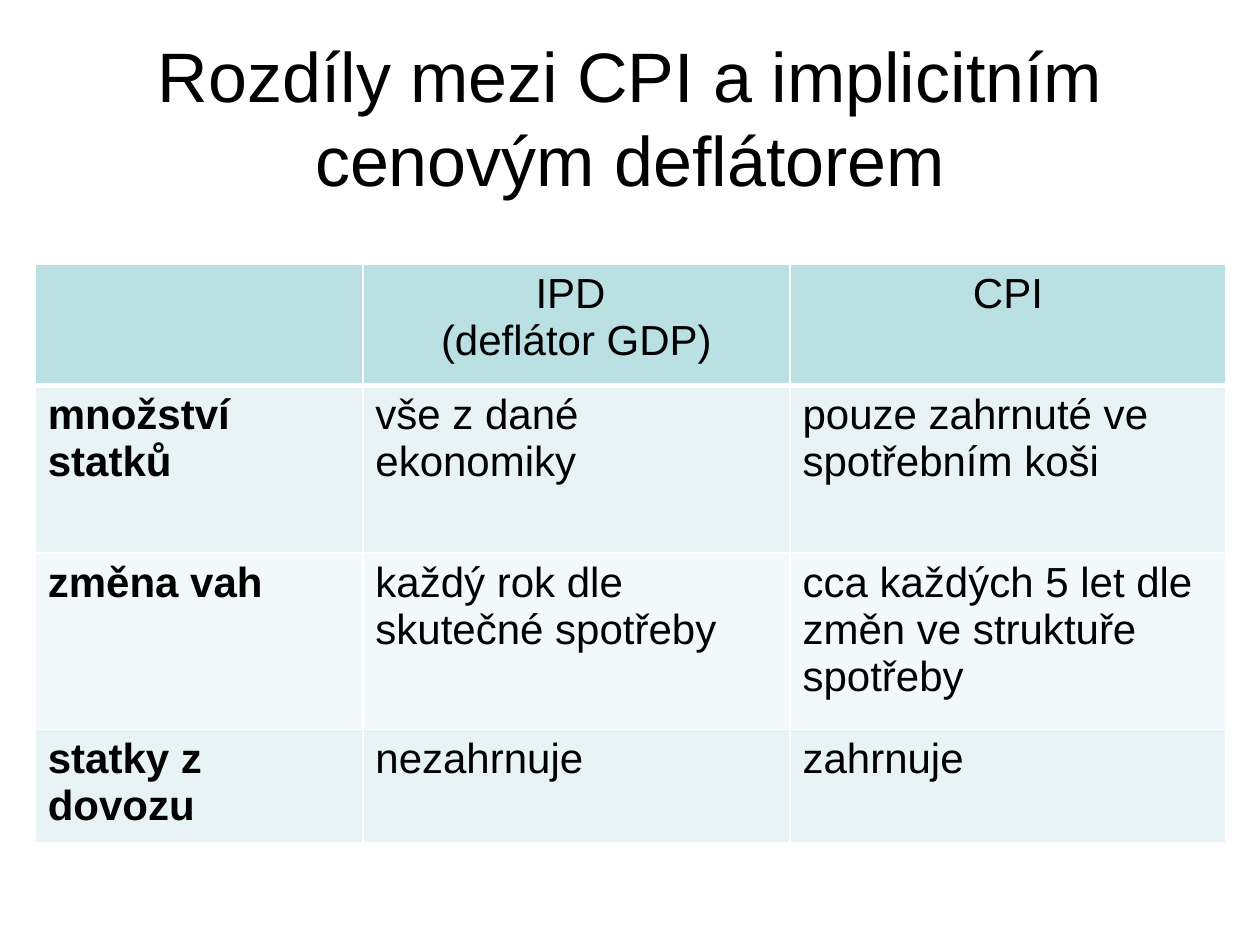
from lxml.etree import SubElement
from pptx import Presentation
from pptx.dml.color import RGBColor
from pptx.enum.text import MSO_ANCHOR, PP_ALIGN
from pptx.oxml.ns import qn
from pptx.util import Inches, Pt

TITLE = "Rozdíly mezi CPI a implicitním cenovým deflátorem"
ROWS = [
    ["", "IPD \n(deflátor GDP)", "CPI"],
    ["množství statků", "vše z dané ekonomiky", "pouze zahrnuté ve spotřebním koši"],
    ["změna vah", "každý rok dle skutečné spotřeby",
     "cca každých 5 let dle změn ve struktuře spotřeby"],
    ["statky z dovozu", "nezahrnuje", "zahrnuje"],
]
COL_WIDTHS = [2.6, 3.39, 3.46]
ROW_HEIGHTS = [0.96, 1.33, 1.4, 0.56]
HEADER_FILL, BAND_FILLS = "BBE0E3", ["F3F9FA", "E7F3F4"]
TEXT, BORDER = "000000", "FFFFFF"


def rgb(value):
    return RGBColor.from_string(value)


def write(tf, text, size, align, bold=False):
    for i, line in enumerate(text.split("\n")):
        p = tf.paragraphs[0] if i == 0 else tf.add_paragraph()
        p.alignment = align
        if line:
            r = p.add_run()
            r.text = line
            r.font.name, r.font.size, r.font.bold = "Arial", Pt(size), bold
            r.font.color.rgb = rgb(TEXT)


def add_borders(cell, bottom):
    """Border lines must come before the fill in the cell properties."""
    tc_pr = cell._tc.get_or_add_tcPr()
    for side, width in (("L", 1), ("R", 1), ("T", 1), ("B", bottom)):
        ln = SubElement(tc_pr, qn(f"a:ln{side}"), w=str(Pt(width)))
        fill = SubElement(ln, qn("a:solidFill"))
        SubElement(fill, qn("a:srgbClr"), val=BORDER)


prs = Presentation()
prs.slide_width, prs.slide_height = Inches(10), Inches(7.5)
s = prs.slides.add_slide(prs.slide_layouts[6])

title = s.shapes.add_textbox(Inches(0.5), Inches(0.3), Inches(9), Inches(1.25))
tf = title.text_frame
tf.word_wrap = True
tf.vertical_anchor = MSO_ANCHOR.MIDDLE
write(tf, TITLE, 40, PP_ALIGN.CENTER)

table = s.shapes.add_table(
    len(ROWS), len(COL_WIDTHS), Inches(0.28), Inches(2.1),
    Inches(sum(COL_WIDTHS)), Inches(sum(ROW_HEIGHTS))).table
for column, width in zip(table.columns, COL_WIDTHS):
    column.width = Inches(width)
for row, height in zip(table.rows, ROW_HEIGHTS):
    row.height = Inches(height)

for i, texts in enumerate(ROWS):
    header = i == 0
    for j, text in enumerate(texts):
        cell = table.cell(i, j)
        add_borders(cell, bottom=3 if header else 1)
        cell.fill.solid()
        cell.fill.fore_color.rgb = rgb(HEADER_FILL if header else BAND_FILLS[i % 2])
        write(cell.text_frame, text, 24,
              PP_ALIGN.CENTER if header else PP_ALIGN.LEFT,
              bold=not header and j == 0)

prs.save("out.pptx")
